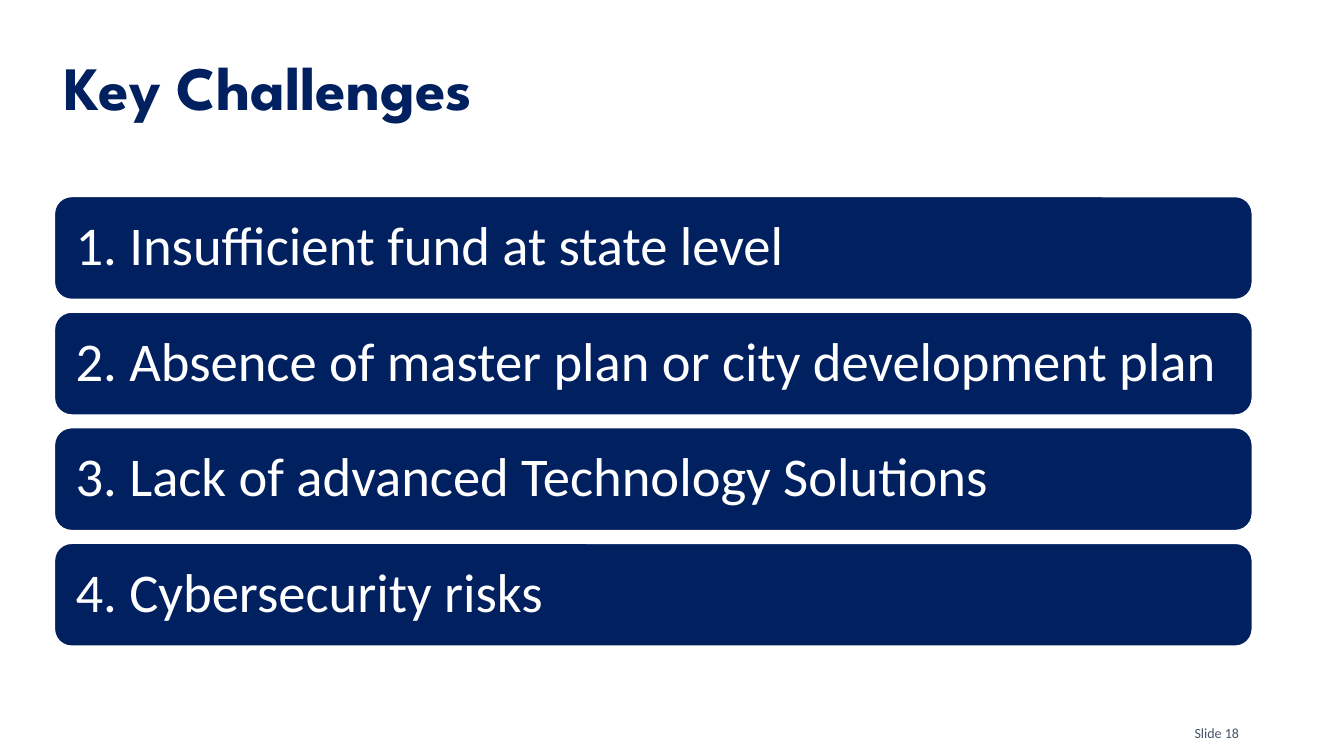
import pptx
import pptx.dml.color
import pptx.enum.shapes
import pptx.enum.text
import pptx.util

Inches = pptx.util.Inches
COLORS = {"navy": "002060", "white": "FFFFFF", "slate": "44546A"}
CHALLENGES = [
    "Insufficient fund at state level",
    "Absence of master plan or city development plan",
    "Lack of advanced Technology Solutions",
    "Cybersecurity risks",
]
LEFT, WIDTH = 0.54, 11.88
FIRST_TOP, LAST_TOP, BAR_HEIGHT = 1.95, 5.39, 1.02


def rgb(name):
    return pptx.dml.color.RGBColor.from_string(COLORS[name])


def write(frame, text, *, size, color, font="Calibri", bold=False,
          spacing=1.0, wrap=True, inset=None):
    frame.auto_size = pptx.enum.text.MSO_AUTO_SIZE.NONE
    frame.word_wrap = wrap
    frame.vertical_anchor = pptx.enum.text.MSO_ANCHOR.MIDDLE
    if inset is not None:
        frame.margin_left = frame.margin_right = Inches(inset)
        frame.margin_top = frame.margin_bottom = Inches(inset)
    paragraph = frame.paragraphs[0]
    paragraph.alignment = pptx.enum.text.PP_ALIGN.LEFT
    paragraph.line_spacing = spacing
    run = paragraph.add_run()
    run.text = text
    run.font.name = font
    run.font.size = pptx.util.Pt(size)
    run.font.bold = bold
    run.font.color.rgb = rgb(color)


class ChallengeSlide:
    """Hold the slide and its style, and add each kind of element."""

    def __init__(self, deck):
        self.slide = deck.slides.add_slide(deck.slide_layouts[5])

    def title(self, text):
        heading = self.slide.shapes.title
        heading.left, heading.top = Inches(LEFT), Inches(0.17)
        heading.width, heading.height = Inches(WIDTH), Inches(1.45)
        write(heading.text_frame, text, size=44, color="navy",
              font="League Spartan", bold=True, spacing=0.9)

    def bar(self, text, top):
        bar = self.slide.shapes.add_shape(
            pptx.enum.shapes.MSO_SHAPE.ROUNDED_RECTANGLE,
            Inches(LEFT), Inches(top), Inches(WIDTH), Inches(BAR_HEIGHT))
        bar.shadow.inherit = False
        bar.fill.solid()
        bar.fill.fore_color.rgb = rgb("navy")
        bar.line.color.rgb = rgb("white")
        bar.line.width = pptx.util.Pt(1)
        write(bar.text_frame, text, size=39, color="white",
              spacing=0.9, inset=0.16)

    def page_label(self, text):
        label = self.slide.shapes.add_textbox(
            Inches(11.75), Inches(7.14), Inches(0.66), Inches(0.27))
        write(label.text_frame, text, size=10, color="slate", wrap=False)


def main():
    deck = pptx.Presentation()
    deck.slide_width, deck.slide_height = Inches(13.33), Inches(7.5)
    page = ChallengeSlide(deck)
    page.title("Key Challenges")
    step = (LAST_TOP - FIRST_TOP) / (len(CHALLENGES) - 1)
    for index, challenge in enumerate(CHALLENGES):
        page.bar(f"{index + 1}. {challenge}", FIRST_TOP + index * step)
    page.page_label("Slide 18")
    deck.save("out.pptx")


if __name__ == "__main__":
    main()
